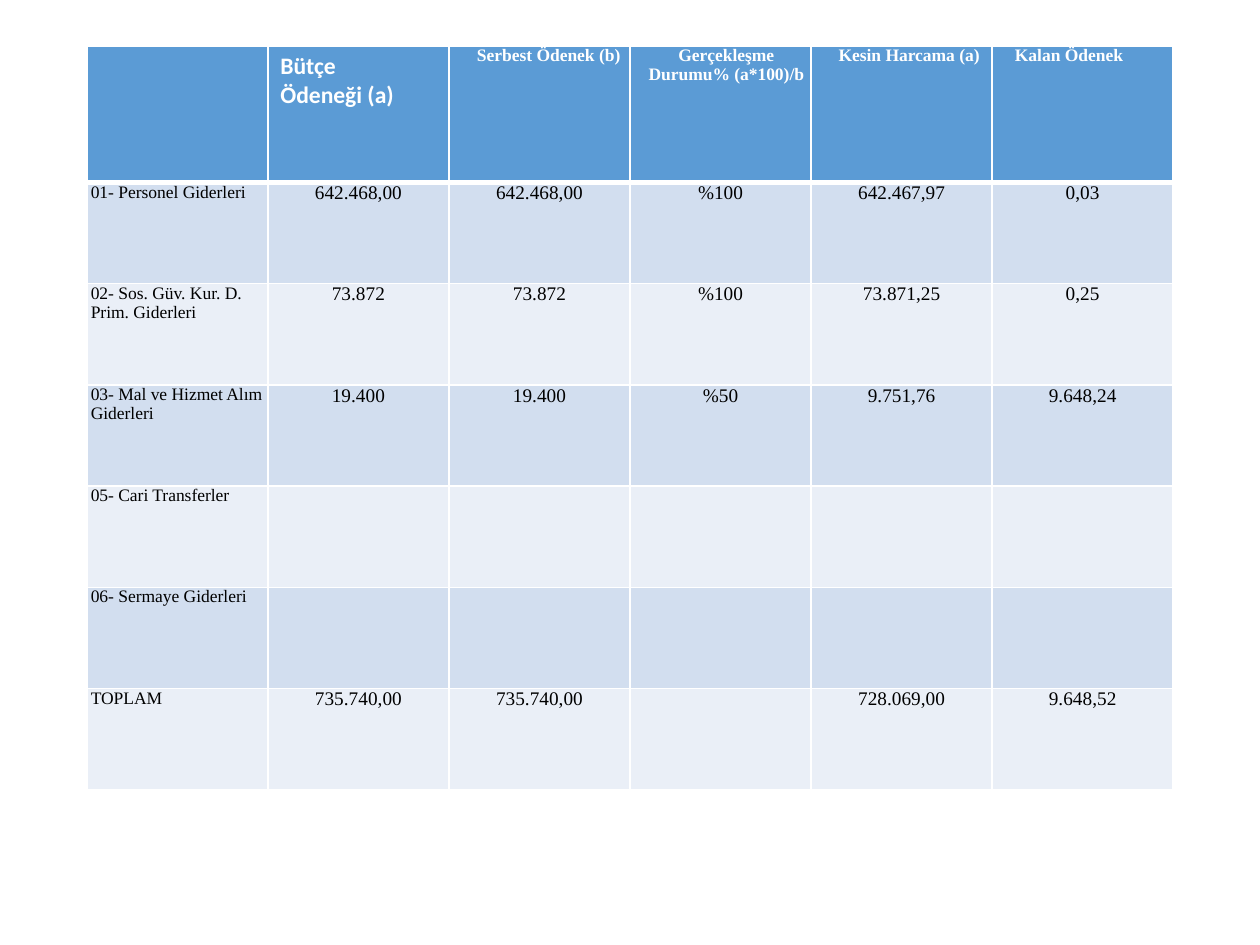
from lxml import etree
from pptx import Presentation
from pptx.dml.color import RGBColor
from pptx.enum.text import PP_ALIGN
from pptx.oxml.ns import qn
from pptx.util import Cm, Pt

LEFT, CENTER = PP_ALIGN.LEFT, PP_ALIGN.CENTER
WHITE = RGBColor(0xFF, 0xFF, 0xFF)
BLACK = RGBColor(0x00, 0x00, 0x00)
HEADER_BLUE = RGBColor(0x5B, 0x9B, 0xD5)
BAND_DARK = RGBColor(0xD2, 0xDE, 0xEF)
BAND_LIGHT = RGBColor(0xEA, 0xEF, 0xF7)

SERIF = "Times New Roman"
COLUMN_WIDTH = Cm(3.65)
HEADER_HEIGHT = Cm(2.75)
ROW_HEIGHT = Cm(2.04)

# Header text, left margin in cm, alignment
SERIF_HEADERS = [
    (" Serbest Ödenek (b)", 0.28, CENTER),
    ("Gerçekleşme Durumu% (a*100)/b", 0.23, CENTER),
    ("Kesin Harcama (a)", 0.3, CENTER),
    ("Kalan Ödenek", 0.46, LEFT),
]
# Label paragraphs, space before in points, amounts
BUDGET_ROWS = [
    (["01- Personel Giderleri"], 5.2,
     ["642.468,00", "642.468,00", "%100", "642.467,97", "0,03"]),
    (["02- Sos. Güv. Kur. D. Prim. Giderleri"], 0,
     ["73.872", "73.872", "%100", "73.871,25", "0,25"]),
    (["03- Mal ve Hizmet Alım", "Giderleri"], 0,
     ["19.400", "19.400", "%50", "9.751,76", "9.648,24"]),
    (["05- Cari Transferler"], 1.1, [""] * 5),
    (["06- Sermaye Giderleri"], 1.1, [""] * 5),
    (["TOPLAM"], 6.2,
     ["735.740,00", "735.740,00", "", "728.069,00", "9.648,52"]),
]


def set_borders(cell, top=1, bottom=1):
    """Draw white cell borders; top and bottom widths are in points."""
    properties = cell._tc.get_or_add_tcPr()
    for side, width in (("L", 1), ("R", 1), ("T", top), ("B", bottom)):
        line = etree.SubElement(properties, qn(f"a:ln{side}"), w=str(Pt(width)))
        fill = etree.SubElement(line, qn("a:solidFill"))
        etree.SubElement(fill, qn("a:srgbClr"), val=str(WHITE))


def fill_cell(cell, color):
    cell.fill.solid()
    cell.fill.fore_color.rgb = color


def remove_margins(cell):
    cell.margin_left = cell.margin_right = 0
    cell.margin_top = cell.margin_bottom = 0


def write_cell(cell, lines, size, color, font=SERIF, bold=False,
               align=LEFT, indent=0, space_before=0):
    """Write one paragraph per line; indent is in cm."""
    frame = cell.text_frame
    for number, line in enumerate(lines):
        para = frame.add_paragraph() if number else frame.paragraphs[0]
        para.alignment = align
        para.space_before = Pt(space_before)
        if indent:
            para._p.get_or_add_pPr().set("marL", str(Cm(indent)))
        span = para.add_run()
        span.text = line
        span.font.name = font
        span.font.size = Pt(size)
        span.font.bold = bold
        span.font.color.rgb = color


def style_grid(table):
    for column in table.columns:
        column.width = COLUMN_WIDTH
    for number, row in enumerate(table.rows):
        row.height = ROW_HEIGHT if number else HEADER_HEIGHT
        band = BAND_DARK if number % 2 else BAND_LIGHT
        for cell in row.cells:
            set_borders(cell, top=3 if number == 1 else 1,
                        bottom=1 if number else 3)
            fill_cell(cell, band if number else HEADER_BLUE)


def write_header(table):
    write_cell(table.cell(0, 1), ["Bütçe", "Ödeneği (a)"], 13.5, WHITE,
               font="Calibri", bold=True)
    for column, (text, indent, align) in enumerate(SERIF_HEADERS, start=2):
        cell = table.cell(0, column)
        remove_margins(cell)
        write_cell(cell, [text], 10, WHITE, bold=True, align=align, indent=indent)


def write_budget_rows(table):
    for row, (label, space_before, amounts) in enumerate(BUDGET_ROWS, start=1):
        label_cell = table.cell(row, 0)
        remove_margins(label_cell)
        write_cell(label_cell, label, 10, BLACK, indent=0.08,
                   space_before=space_before)
        for column, amount in enumerate(amounts, start=1):
            if amount:
                cell = table.cell(row, column)
                remove_margins(cell)
                write_cell(cell, [amount], 11, BLACK, align=CENTER)


def main():
    deck = Presentation()
    deck.slide_width, deck.slide_height = Cm(25.4), Cm(19.05)
    page = deck.slides.add_slide(deck.slide_layouts[6])
    row_count, column_count = len(BUDGET_ROWS) + 1, len(SERIF_HEADERS) + 2
    table = page.shapes.add_table(
        row_count, column_count, Cm(1.75), Cm(0.93),
        COLUMN_WIDTH * column_count,
        HEADER_HEIGHT + ROW_HEIGHT * len(BUDGET_ROWS)).table
    style_grid(table)
    write_header(table)
    write_budget_rows(table)
    deck.save("out.pptx")


if __name__ == "__main__":
    main()
